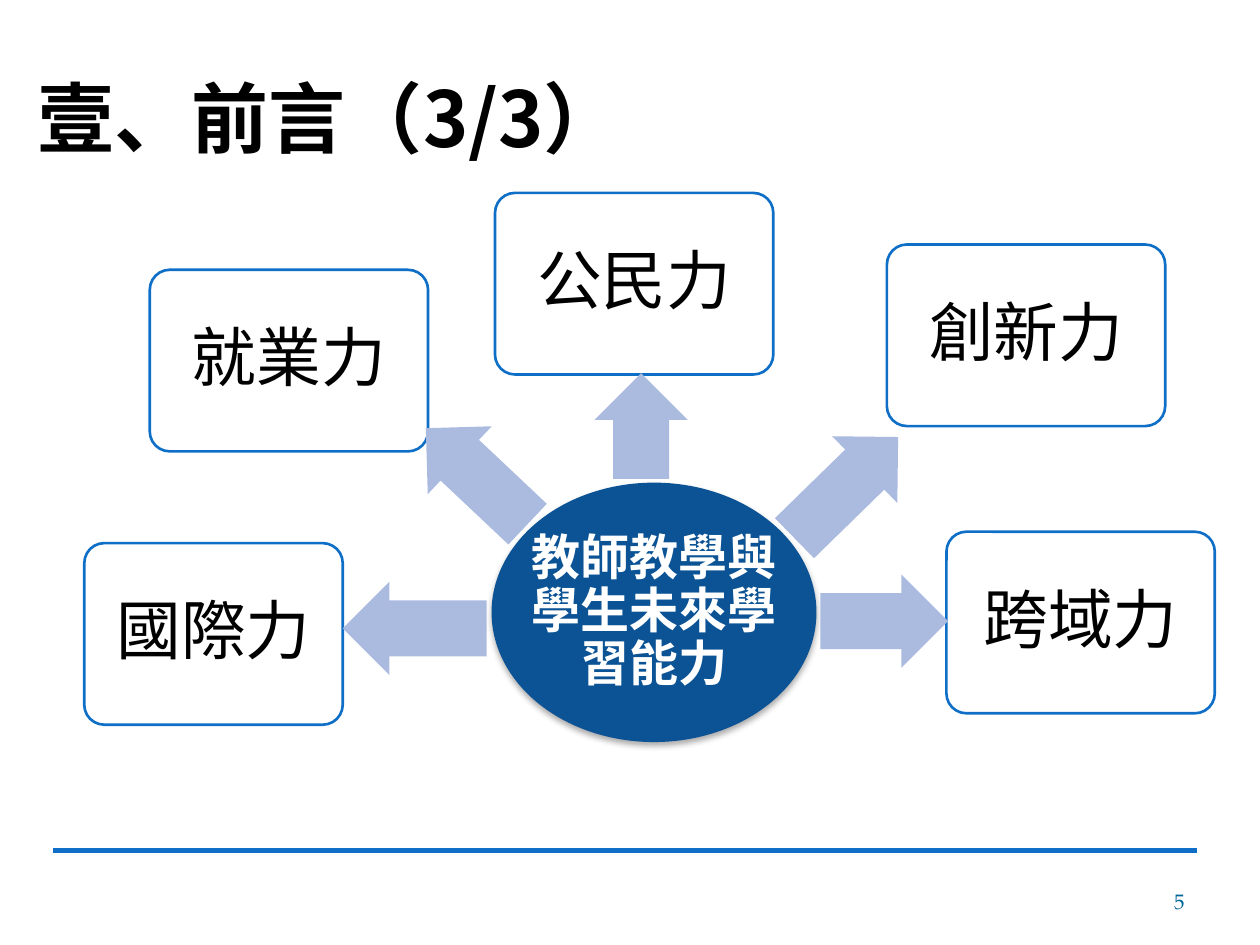
"""Build a slide showing five student abilities around a central teaching goal."""
from dataclasses import dataclass

from lxml.etree import SubElement
from pptx import Presentation
from pptx.dml.color import RGBColor
from pptx.enum.shapes import MSO_CONNECTOR, MSO_SHAPE
from pptx.enum.text import MSO_ANCHOR, MSO_AUTO_SIZE, PP_ALIGN
from pptx.oxml.ns import qn
from pptx.util import Cm, Pt

BLACK = RGBColor(0x00, 0x00, 0x00)
WHITE = RGBColor(0xFF, 0xFF, 0xFF)
BLUE = RGBColor(0x0F, 0x6F, 0xC6)
DARK_BLUE = RGBColor(0x0B, 0x53, 0x94)
PALE_BLUE = RGBColor(0xAB, 0xBB, 0xDF)
NUMBER_BLUE = RGBColor(0x00, 0x66, 0x99)
BODY_FONT = "TeX Gyre Pagella"
CHINESE_FONT = "Noto Sans CJK SC"
BOX_HEIGHT = 3.66
ARROW_HEIGHT = 1.88


@dataclass
class Ability:
    text: str
    left: float
    top: float
    width: float


@dataclass
class Arrow:
    left: float
    top: float
    width: float
    rotation: float


ABILITIES = [
    Ability("國際力", 1.7, 10.95, 5.21),
    Ability("就業力", 3.02, 5.44, 5.61),
    Ability("公民力", 9.98, 3.89, 5.61),
    Ability("創新力", 17.88, 4.93, 5.61),
    Ability("跨域力", 19.08, 10.72, 5.41),
]
ARROWS = [
    Arrow(8.2, 8.66, 2.82, 43.3),
    Arrow(11.86, 7.65, 2.13, 90),
    Arrow(15.6, 8.89, 2.92, 135.7),
    Arrow(16.54, 11.58, 2.57, 180),
    Arrow(6.91, 11.73, 2.9, 0),
]


def write_text(shape, text: str, *, size: float, color: RGBColor, font: str = BODY_FONT,
               bold: bool = False, align=PP_ALIGN.CENTER, anchor=MSO_ANCHOR.MIDDLE,
               side_inset: float = 0.25, end_inset: float = 0.13,
               wrap: bool = True, line_spacing: float = 1.0) -> None:
    """Fill a shape with one formatted paragraph."""
    frame = shape.text_frame
    frame.auto_size = MSO_AUTO_SIZE.NONE
    frame.word_wrap = wrap
    frame.vertical_anchor = anchor
    frame.margin_left = frame.margin_right = Cm(side_inset)
    frame.margin_top = frame.margin_bottom = Cm(end_inset)
    paragraph = frame.paragraphs[0]
    paragraph.alignment = align
    paragraph.line_spacing = line_spacing
    run = paragraph.add_run()
    run.text = text
    run.font.size = Pt(size)
    run.font.bold = bold
    run.font.color.rgb = color
    run.font.name = font
    SubElement(run.font._element, qn("a:ea"), typeface=CHINESE_FONT)


def add_ability(slide, ability: Ability) -> None:
    """Draw an outlined box that names one ability."""
    box = slide.shapes.add_shape(MSO_SHAPE.ROUNDED_RECTANGLE, Cm(ability.left),
                                 Cm(ability.top), Cm(ability.width), Cm(BOX_HEIGHT))
    box.adjustments[0] = 0.11
    box.shadow.inherit = False
    box.fill.background()
    box.line.color.rgb = BLUE
    box.line.width = Pt(1.5)
    write_text(box, ability.text, size=37, color=BLACK, line_spacing=0.9)


def add_arrow(slide, arrow: Arrow) -> None:
    """Draw a block arrow turned toward its ability."""
    shape = slide.shapes.add_shape(MSO_SHAPE.LEFT_ARROW, Cm(arrow.left), Cm(arrow.top),
                                   Cm(arrow.width), Cm(ARROW_HEIGHT))
    shape.adjustments[0] = 0.6
    shape.adjustments[1] = 0.5
    shape.rotation = arrow.rotation
    shape.shadow.inherit = False
    shape.fill.solid()
    shape.fill.fore_color.rgb = PALE_BLUE
    shape.line.fill.background()


def add_center(slide) -> None:
    """Draw the shadowed central ellipse."""
    ellipse = slide.shapes.add_shape(MSO_SHAPE.OVAL, Cm(9.91), Cm(9.73), Cm(6.55), Cm(5.23))
    ellipse.fill.solid()
    ellipse.fill.fore_color.rgb = DARK_BLUE
    ellipse.line.fill.background()
    ellipse.shadow.inherit = False
    effects = ellipse._element.spPr.find(qn("a:effectLst"))
    shadow = SubElement(effects, qn("a:outerShdw"), blurRad=str(Pt(3.5)),
                        dist=str(Pt(2.2)), dir="5400000", rotWithShape="0")
    shadow_color = SubElement(shadow, qn("a:srgbClr"), val=str(BLACK))
    SubElement(shadow_color, qn("a:alpha"), val="32000")
    write_text(ellipse, "教師教學與學生未來學習能力", size=28, color=WHITE, bold=True,
               side_inset=-0.25, end_inset=0, line_spacing=0.9)


def add_base_line(slide) -> None:
    """Draw the rule above the slide number."""
    line = slide.shapes.add_connector(MSO_CONNECTOR.STRAIGHT, Cm(1.07), Cm(17.15),
                                      Cm(24.13), Cm(17.15))
    line.line.color.rgb = BLUE
    line.line.width = Pt(3)
    SubElement(line._element.spPr, qn("a:effectLst"))


def main() -> None:
    """Assemble and save the slide."""
    presentation = Presentation()
    presentation.slide_width, presentation.slide_height = Cm(25.4), Cm(19.05)
    slide = presentation.slides.add_slide(presentation.slide_layouts[5])
    add_base_line(slide)
    title = slide.shapes.title
    title.left, title.top, title.width, title.height = Cm(0.51), Cm(1.3), Cm(13.13), Cm(2.13)
    write_text(title, "壹、前言（3/3）", size=44, color=BLACK, font=CHINESE_FONT, bold=True,
               align=PP_ALIGN.LEFT, anchor=MSO_ANCHOR.TOP, wrap=False)
    add_center(slide)
    for ability in ABILITIES:
        add_ability(slide, ability)
    for arrow in ARROWS:
        add_arrow(slide, arrow)
    number = slide.shapes.add_textbox(Cm(18.21), Cm(17.65), Cm(5.92), Cm(1.02))
    write_text(number, "5", size=12, color=NUMBER_BLUE, align=PP_ALIGN.RIGHT)
    presentation.save("out.pptx")


if __name__ == "__main__":
    main()
